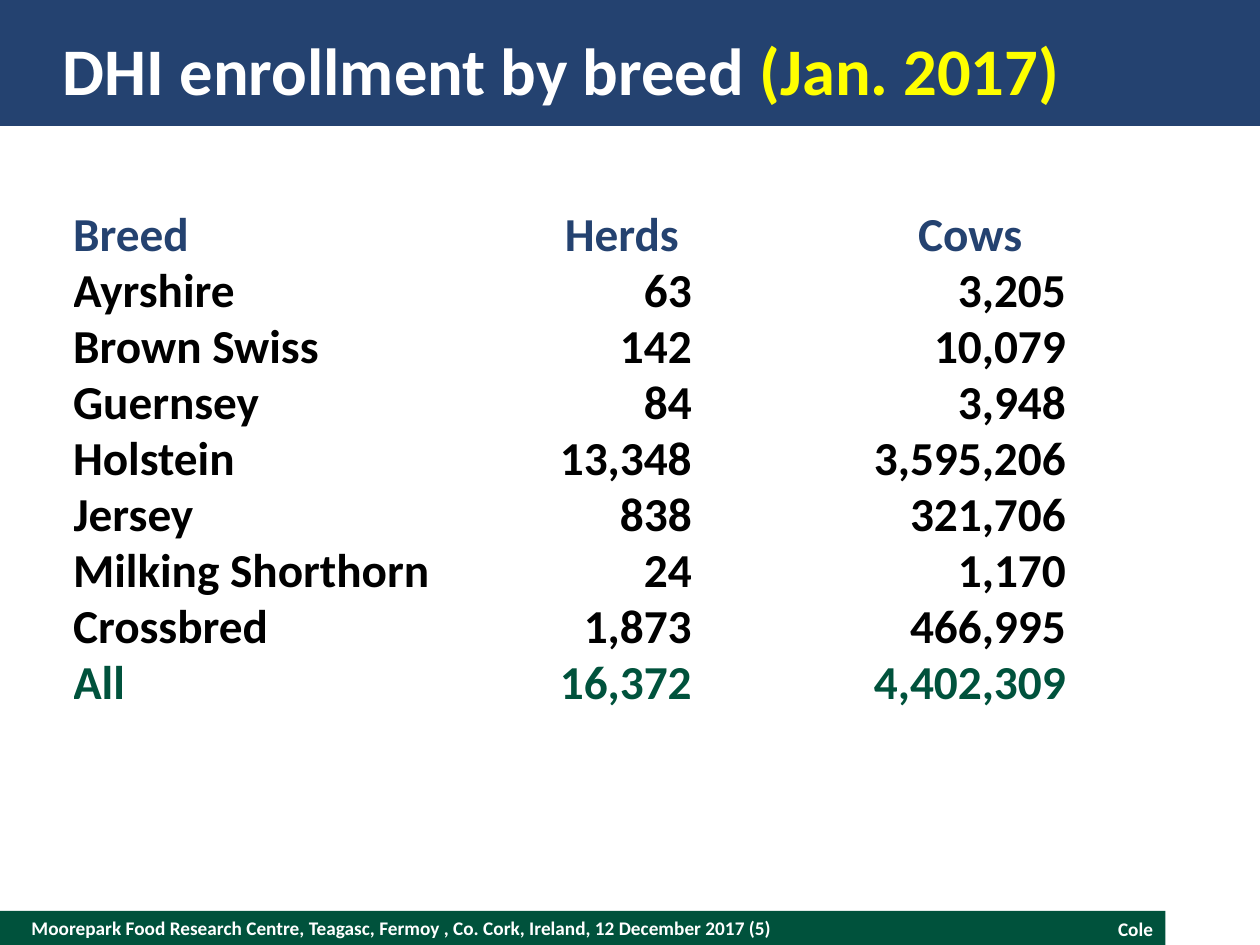
from dataclasses import dataclass

from pptx import Presentation
from pptx.dml.color import RGBColor
from pptx.enum.shapes import MSO_SHAPE
from pptx.enum.text import MSO_ANCHOR, PP_ALIGN
from pptx.util import Inches, Pt

LEFT, CENTER, RIGHT = PP_ALIGN.LEFT, PP_ALIGN.CENTER, PP_ALIGN.RIGHT
MIDDLE, BOTTOM = MSO_ANCHOR.MIDDLE, MSO_ANCHOR.BOTTOM
RECT = MSO_SHAPE.RECTANGLE

COLORS = {"navy": "244270", "green": "00523C", "yellow": "FFFF00",
          "white": "FFFFFF", "black": "000000"}
FONT = "Calibri"
SLIDE_W, SLIDE_H = 10, 7.5
FOOTER_H = 0.27
FOOTER_TOP = SLIDE_H - FOOTER_H
ROW_PT = 32


@dataclass
class Box:
    left: float
    top: float
    width: float
    height: float

    def emu(self) -> tuple:
        return tuple(Inches(v) for v in (self.left, self.top, self.width, self.height))


@dataclass
class Label:
    box: Box
    runs: list  # (text, colour name)
    size: int
    align: PP_ALIGN = LEFT
    inset: float = 0


@dataclass
class Column:
    width: float
    head_align: PP_ALIGN
    body_align: PP_ALIGN
    inset: float  # right margin of the body cells


BANDS = [(Box(0, FOOTER_TOP, 9.25, FOOTER_H), "green"),
         (Box(0, 0, SLIDE_W, 1), "navy")]

LABELS = [
    Label(Box(0.25, FOOTER_TOP, 6.5, FOOTER_H),
          [("Moorepark Food Research Centre, Teagasc, Fermoy , Co. Cork, "
            "Ireland, 12 December 2017 (5)", "white")], 11),
    Label(Box(7.25, FOOTER_TOP, 2, 0.29), [("Cole", "white")], 11, RIGHT, 0.1),
    Label(Box(0.5, 0.2, 9, 0.7),
          [("DHI enrollment by breed ", "white"), ("(Jan. 2017)", "yellow")], 38),
]

COLUMNS = [Column(3.05, LEFT, LEFT, 0),
           Column(2.61, CENTER, RIGHT, 0.75),
           Column(2.92, CENTER, RIGHT, 0.7)]

ROWS = [
    ("Breed", "Herds", "Cows"),
    ("Ayrshire", "63", "3,205"),
    ("Brown Swiss", "142", "10,079"),
    ("Guernsey", "84", "3,948"),
    ("Holstein", "13,348", "3,595,206"),
    ("Jersey", "838", "321,706"),
    ("Milking Shorthorn", "24", "1,170"),
    ("Crossbred", "1,873", "466,995"),
    ("All", "16,372", "4,402,309"),
]


def rgb(name: str) -> RGBColor:
    return RGBColor.from_string(COLORS[name])


def style(p, size: int, align: PP_ALIGN) -> None:
    p.alignment = align
    p.font.name, p.font.size, p.font.bold = FONT, Pt(size), True


def draw_band(s, box: Box, color: str) -> None:
    sp = s.shapes.add_shape(RECT, *box.emu())
    sp.shadow.inherit = False
    sp.fill.solid()
    sp.fill.fore_color.rgb = rgb(color)
    sp.line.fill.background()


def draw_label(s, label: Label) -> None:
    tf = s.shapes.add_textbox(*label.box.emu()).text_frame
    tf.word_wrap = True
    tf.vertical_anchor = MIDDLE
    tf.margin_left = tf.margin_right = Inches(label.inset)
    tf.margin_top = tf.margin_bottom = 0
    p = tf.paragraphs[0]
    style(p, label.size, label.align)
    for text, color in label.runs:
        r = p.add_run()
        r.text = text
        r.font.color.rgb = rgb(color)


def draw_table(s, left: float, top: float) -> None:
    box = Box(left, top, sum(c.width for c in COLUMNS), len(ROWS) * ROW_PT / 72)
    table = s.shapes.add_table(len(ROWS), len(COLUMNS), *box.emu()).table
    table.first_row = table.horz_banding = False
    for i, col in enumerate(COLUMNS):
        table.columns[i].width = Inches(col.width)
    row_colors = ["navy"] + ["black"] * (len(ROWS) - 2) + ["green"]
    for i, (values, color) in enumerate(zip(ROWS, row_colors)):
        table.rows[i].height = Pt(ROW_PT)
        for j, (value, col) in enumerate(zip(values, COLUMNS)):
            cell = table.cell(i, j)
            cell.fill.background()
            cell.vertical_anchor = BOTTOM
            cell.margin_left = cell.margin_top = cell.margin_bottom = 0
            cell.margin_right = Inches(col.inset if i else 0)
            p = cell.text_frame.paragraphs[0]
            p.text = value
            p.line_spacing = Pt(ROW_PT)
            style(p, 27, col.body_align if i else col.head_align)
            p.font.color.rgb = rgb(color)


def main() -> None:
    prs = Presentation()
    prs.slide_width, prs.slide_height = Inches(SLIDE_W), Inches(SLIDE_H)
    s = prs.slides.add_slide(prs.slide_layouts[6])
    # Header and footer bands
    for box, color in BANDS:
        draw_band(s, box, color)
    # Footer texts and title
    for label in LABELS:
        draw_label(s, label)
    # Enrollment figures
    draw_table(s, 0.58, 1.65)
    prs.save("out.pptx")


if __name__ == "__main__":
    main()
